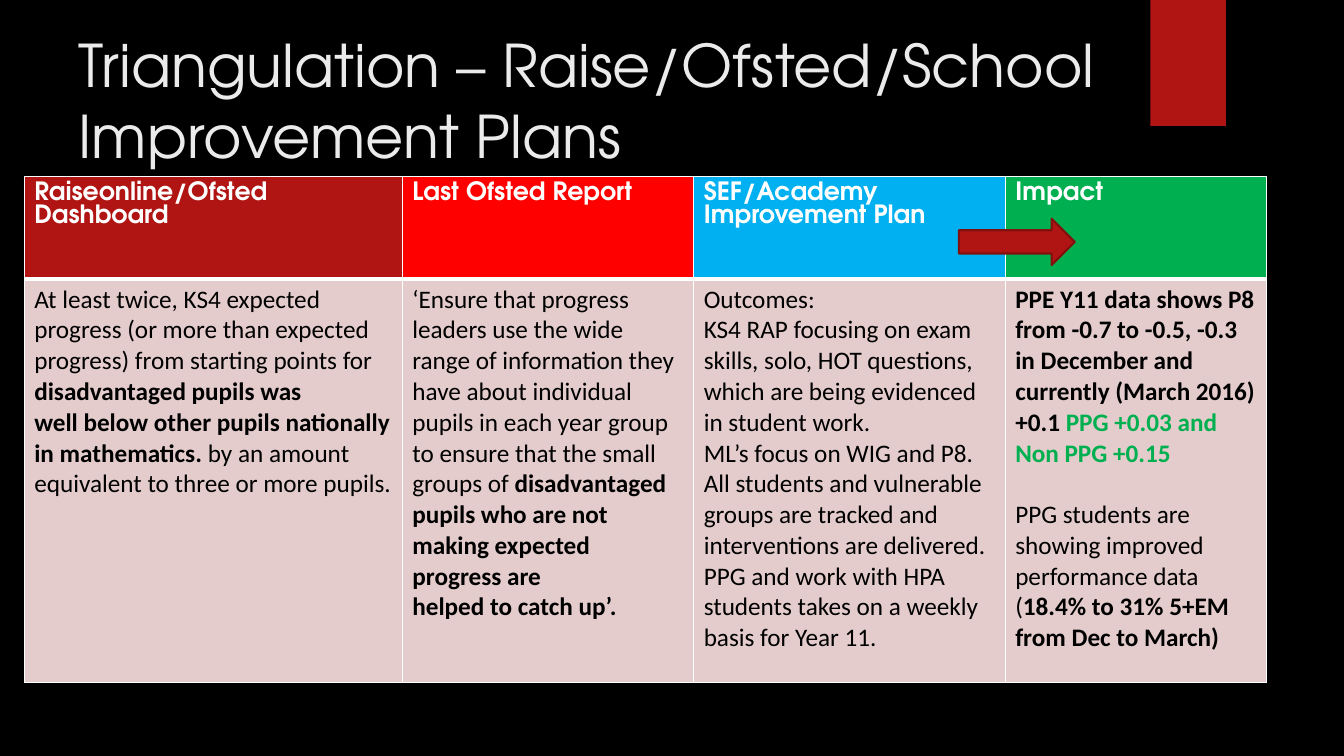
import pptx
import pptx.dml.color
import pptx.enum.shapes
import pptx.enum.text
import pptx.oxml
import pptx.oxml.ns
import pptx.util

Inches = pptx.util.Inches
RGBColor = pptx.dml.color.RGBColor
MSO_SHAPE = pptx.enum.shapes.MSO_SHAPE

BLACK = RGBColor(0x00, 0x00, 0x00)
WHITE = RGBColor(0xFF, 0xFF, 0xFF)
TITLE_GREY = RGBColor(0xEB, 0xEB, 0xEB)
DARK_RED = RGBColor(0xB0, 0x15, 0x13)
ARROW_EDGE = RGBColor(0x82, 0x10, 0x0E)
RED = RGBColor(0xFF, 0x00, 0x00)
BLUE = RGBColor(0x00, 0xB0, 0xF0)
GREEN = RGBColor(0x00, 0xB0, 0x50)
PINK = RGBColor(0xE4, 0xCC, 0xCC)

HEADING_FONT = "TeX Gyre Adventor"
BODY_FONT = "Calibri"
BOLD = {"bold": True}

# Each column: width, heading, heading fill, paragraphs of (text, format) runs
COLUMNS = [
    (3.75, "Raiseonline/Ofsted Dashboard", DARK_RED, [
        [("At least twice, KS4 expected progress (or more than expected progress) "
          "from starting points for ", {}),
         ("disadvantaged pupils was", BOLD)],
        [("well below other pupils nationally in mathematics. ", BOLD),
         ("by an amount equivalent to three or more pupils.", {})],
    ]),
    (2.89, "Last Ofsted Report", RED, [
        [("‘Ensure that progress leaders use the wide range of information they have "
          "about individual pupils in each year group to ensure that the small "
          "groups of ", {}),
         ("disadvantaged pupils who are not making expected progress are", BOLD)],
        [("helped to catch up’.", BOLD)],
    ]),
    (3.09, "SEF/Academy Improvement Plan", BLUE, [
        [("Outcomes:", {})],
        [("KS4 RAP focusing on exam skills, solo, HOT questions, which are being "
          "evidenced in student work.", {})],
        [("ML’s focus on WIG and P8.", {})],
        [("All students and vulnerable groups are tracked and interventions are "
          "delivered.", {})],
        [("PPG and work with HPA students takes on a weekly basis for Year 11.", {})],
    ]),
    (2.59, "Impact", GREEN, [
        [("PPE Y11 data shows P8 from -0.7 to -0.5, -0.3 in December and currently "
          "(March 2016) +0.1 ", BOLD),
         ("PPG +0.03 and Non PPG +0.15", {"bold": True, "color": GREEN})],
        [("PPG students are showing improved performance data (", {}),
         ("18.4% to 31% 5+EM from Dec to March)", BOLD)],
    ]),
]
ROW_HEIGHTS = [1.02, 4.0]
IMPACT_GAP = 22


def add_text(paragraph, text, font=BODY_FONT, size=18, color=BLACK, bold=False):
    run = paragraph.add_run()
    run.text = text
    run.font.name = font
    run.font.size = pptx.util.Pt(size)
    run.font.color.rgb = color
    run.font.bold = bold


def add_block(slide, preset, left, top, width, height):
    shape = slide.shapes.add_shape(
        preset, Inches(left), Inches(top), Inches(width), Inches(height))
    shape.shadow.inherit = False
    shape.fill.solid()
    shape.fill.fore_color.rgb = DARK_RED
    shape.line.fill.background()
    return shape


def style_cell(cell, fill, top, bottom):
    """Give the cell white borders, with top and bottom widths in points, and a fill."""
    properties = cell._tc.get_or_add_tcPr()
    for side, width in (("L", 1), ("R", 1), ("T", top), ("B", bottom)):
        properties.append(pptx.oxml.parse_xml(
            f'<a:ln{side} {pptx.oxml.ns.nsdecls("a")} w="{pptx.util.Pt(width)}">'
            f'<a:solidFill><a:srgbClr val="{WHITE}"/></a:solidFill></a:ln{side}>'))
    cell.fill.solid()
    cell.fill.fore_color.rgb = fill


def add_title(slide, left, top, width, height):
    title = slide.shapes.title
    title.left, title.top = Inches(left), Inches(top)
    title.width, title.height = Inches(width), Inches(height)
    frame = title.text_frame
    frame.word_wrap = True
    frame.auto_size = pptx.enum.text.MSO_AUTO_SIZE.NONE
    frame.vertical_anchor = pptx.enum.text.MSO_ANCHOR.MIDDLE
    paragraph = frame.paragraphs[0]
    paragraph.alignment = pptx.enum.text.PP_ALIGN.LEFT
    add_text(paragraph, "Triangulation – Raise/Ofsted/School Improvement Plans",
             font=HEADING_FONT, size=42, color=TITLE_GREY)


def fill_body_cell(cell, paragraphs):
    for index, runs in enumerate(paragraphs):
        frame = cell.text_frame
        paragraph = frame.add_paragraph() if index else frame.paragraphs[0]
        for text, text_format in runs:
            add_text(paragraph, text, **text_format)


def add_evidence_table(slide, left, top):
    widths = [column[0] for column in COLUMNS]
    table = slide.shapes.add_table(
        len(ROW_HEIGHTS), len(COLUMNS), Inches(left), Inches(top),
        Inches(sum(widths)), Inches(sum(ROW_HEIGHTS))).table
    for row, height in zip(table.rows, ROW_HEIGHTS):
        row.height = Inches(height)
    for index, (width, heading, color, paragraphs) in enumerate(COLUMNS):
        table.columns[index].width = Inches(width)
        header, body = table.cell(0, index), table.cell(1, index)
        style_cell(header, color, top=1, bottom=3)
        style_cell(body, PINK, top=3, bottom=1)
        add_text(header.text_frame.paragraphs[0], heading,
                 font=HEADING_FONT, color=WHITE, bold=True)
        fill_body_cell(body, paragraphs)
    impact = table.cell(1, len(COLUMNS) - 1)
    impact.text_frame.paragraphs[1].space_before = pptx.util.Pt(IMPACT_GAP)


def add_impact_arrow(slide, left, top, width, height):
    arrow = add_block(slide, MSO_SHAPE.RIGHT_ARROW, left, top, width, height)
    arrow.line.color.rgb = ARROW_EDGE
    arrow.line.width = pptx.util.Pt(1.5)


def main():
    presentation = pptx.Presentation()
    presentation.slide_width = Inches(13.33)
    presentation.slide_height = Inches(7.5)
    slide = presentation.slides.add_slide(
        presentation.slide_layouts.get_by_name("Title Only"))
    slide.background.fill.solid()
    slide.background.fill.fore_color.rgb = BLACK
    add_block(slide, MSO_SHAPE.RECTANGLE, 11.41, 0, 0.75, 1.25)
    add_title(slide, 0.68, 0.22, 12.51, 1.53)
    add_evidence_table(slide, 0.24, 1.75)
    add_impact_arrow(slide, 9.51, 2.17, 1.15, 0.46)
    presentation.save("out.pptx")


if __name__ == "__main__":
    main()
